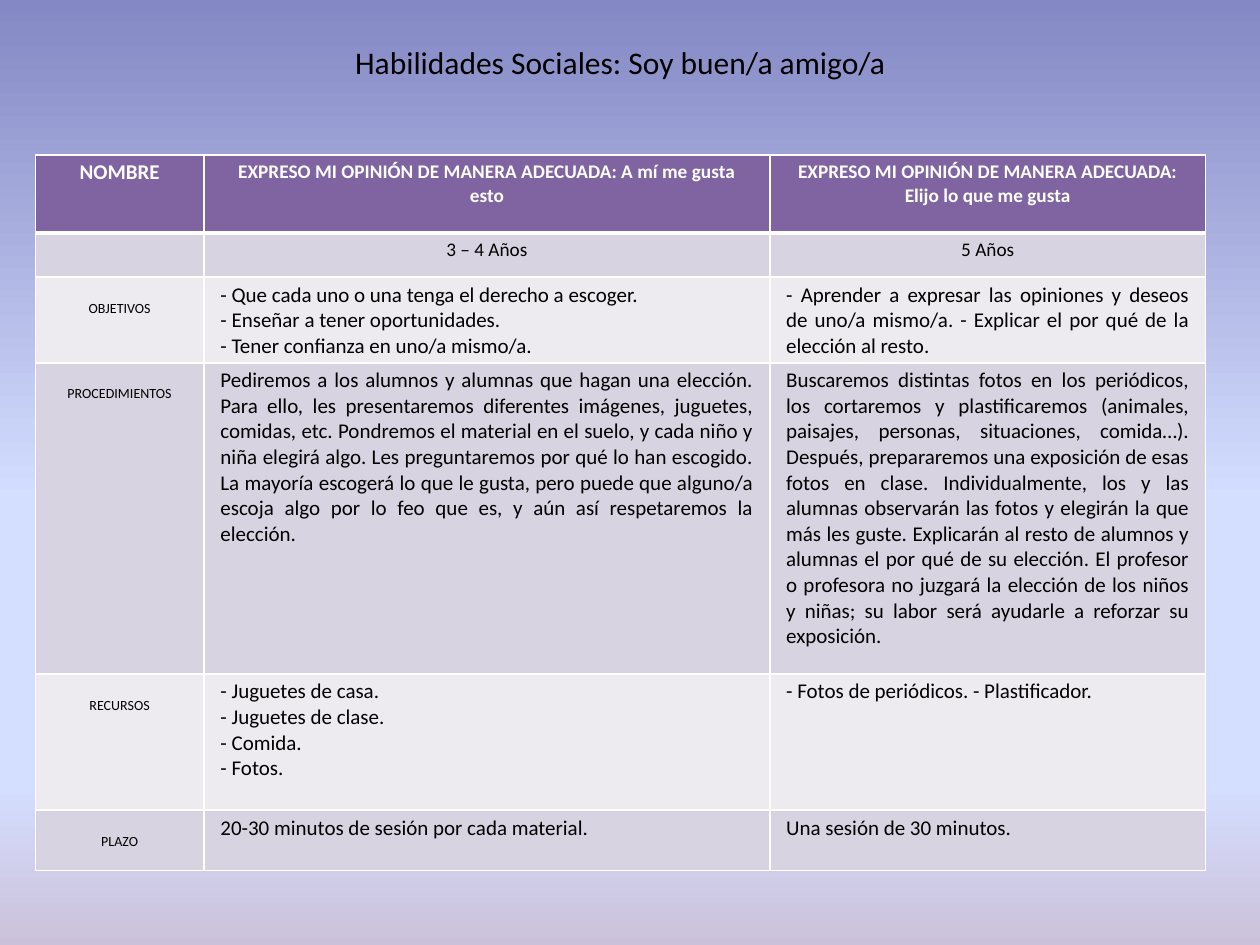
import pptx
import pptx.util
import pptx.dml.color
import pptx.enum.text
import pptx.oxml
import pptx.oxml.ns

Inches, Pt = pptx.util.Inches, pptx.util.Pt
RGB = pptx.dml.color.RGBColor.from_string
ALIGN = pptx.enum.text.PP_ALIGN
LEFT, CENTER, JUSTIFY = ALIGN.LEFT, ALIGN.CENTER, ALIGN.JUSTIFY
qn = pptx.oxml.ns.qn
NAMESPACE = pptx.oxml.ns.nsdecls("a")
COLORS = {"text": "000000", "white": "FFFFFF", "header": "8064A2",
          "band_dark": "D8D3E0", "band_light": "EDEAF0"}
BACKGROUND = [(0, "8488C4"), (53, "D4DEFF"), (83, "D4DEFF"), (100, "CCC1DA")]


def write(text_frame, lines, align, size, bold=False, color="text"):
    font_format = {"name": "Calibri", "size": Pt(size), "bold": bold}
    for index, line in enumerate(lines):
        paragraph = text_frame.add_paragraph() if index else text_frame.paragraphs[0]
        paragraph.alignment = align
        run = paragraph.add_run()
        run.text = line
        for name, value in font_format.items():
            setattr(run.font, name, value)
        run.font.color.rgb = RGB(COLORS[color])


def add_border(cell, position, side, width):
    line = pptx.oxml.parse_xml(
        f'<a:ln{side} {NAMESPACE} w="{Pt(width)}"><a:solidFill>'
        f'<a:srgbClr val="{COLORS["white"]}"/></a:solidFill></a:ln{side}>')
    cell._tc.get_or_add_tcPr().insert(position, line)


presentation = pptx.Presentation()
presentation.slide_width, presentation.slide_height = Inches(10), Inches(7.5)
slide = presentation.slides.add_slide(presentation.slide_layouts[6])

# Background: vertical gradient with four stops
fill = slide.background.fill
fill.gradient()
fill.gradient_angle = 270
stops = slide._element.find(".//" + qn("a:gsLst"))
for stop in list(stops):
    stops.remove(stop)
for share, color in BACKGROUND:
    stops.append(pptx.oxml.parse_xml(
        f'<a:gs {NAMESPACE} pos="{share * 1000}"><a:srgbClr val="{color}"/></a:gs>'))

# Title
title = slide.shapes.add_textbox(Inches(2.72), Inches(0.29), Inches(4.8), Inches(0.4))
title.text_frame.word_wrap = True
write(title.text_frame, ["Habilidades Sociales: Soy buen/a amigo/a"], LEFT, 18)

# Table content: each cell is its lines, alignment and size
label = (CENTER, 8)
rows = [
    [(["NOMBRE"], CENTER, 12),
     (["EXPRESO MI OPINIÓN DE MANERA ADECUADA: A mí me gusta esto"], CENTER, 11),
     (["EXPRESO MI OPINIÓN DE MANERA ADECUADA: Elijo lo que me gusta"], CENTER, 11)],
    [([], CENTER, 11), (["3 – 4 Años"], CENTER, 11), (["5 Años"], CENTER, 11)],
    [(["OBJETIVOS"], *label),
     (["- Que cada uno o una tenga el derecho a escoger.",
       "- Enseñar a tener oportunidades.",
       "- Tener confianza en uno/a mismo/a."], LEFT, 12),
     (["- Aprender a expresar las opiniones y deseos de uno/a mismo/a. "
       "- Explicar el por qué de la elección al resto."], JUSTIFY, 12)],
    [(["PROCEDIMIENTOS"], *label),
     (["Pediremos a los alumnos y alumnas que hagan una elección. Para ello, les "
       "presentaremos diferentes imágenes, juguetes, comidas, etc. Pondremos el "
       "material en el suelo, y cada niño y niña elegirá algo. Les preguntaremos por "
       "qué lo han escogido. La mayoría escogerá lo que le gusta, pero puede que "
       "alguno/a escoja algo por lo feo que es, y aún así respetaremos la elección."],
      JUSTIFY, 12),
     (["Buscaremos distintas fotos en los periódicos, los cortaremos y plastificaremos "
       "(animales, paisajes, personas, situaciones, comida…). Después, prepararemos "
       "una exposición de esas fotos en clase. Individualmente, los y las alumnas "
       "observarán las fotos y elegirán la que más les guste. Explicarán al resto de "
       "alumnos y alumnas el por qué de su elección. El profesor o profesora no "
       "juzgará la elección de los niños y niñas; su labor será ayudarle a reforzar "
       "su exposición."], JUSTIFY, 12)],
    [(["RECURSOS"], *label),
     (["- Juguetes de casa.", "- Juguetes de clase.", "- Comida.", "- Fotos."], LEFT, 12),
     (["- Fotos de periódicos. - Plastificador."], LEFT, 12)],
    [(["PLAZO"], *label),
     (["20-30 minutos de sesión por cada material."], LEFT, 12),
     (["Una sesión de 30 minutos."], LEFT, 12)],
]
column_widths = [1.34, 4.49, 3.46]
row_heights = [0.62, 0.35, 0.68, 2.47, 1.08, 0.48]

# Table grid
table = slide.shapes.add_table(
    len(rows), len(column_widths), Inches(0.28), Inches(1.23),
    Inches(sum(column_widths)), Inches(sum(row_heights))).table
table.horz_banding = False
for column, width in zip(table.columns, column_widths):
    column.width = Inches(width)
for row, height in zip(table.rows, row_heights):
    row.height = Inches(height)

# Cells
for row_index, row in enumerate(rows):
    is_header = row_index == 0
    band = "header" if is_header else "band_dark" if row_index % 2 else "band_light"
    for column_index, (lines, align, size) in enumerate(row):
        cell = table.cell(row_index, column_index)
        is_label = column_index == 0 and row_index > 1
        cell_format = {"margin_left": Inches(0.13), "margin_right": Inches(0.13),
                       "margin_top": Inches(0.18 if is_label else 0.04),
                       "margin_bottom": Inches(0.04)}
        for name, value in cell_format.items():
            setattr(cell, name, value)
        cell.fill.solid()
        cell.fill.fore_color.rgb = RGB(COLORS[band])
        widths = {"L": 1, "R": 1, "T": 3 if row_index == 1 else 1, "B": 3 if is_header else 1}
        for position, (side, width) in enumerate(widths.items()):
            add_border(cell, position, side, width)
        write(cell.text_frame, lines, align, size, is_header, "white" if is_header else "text")
        if not lines:
            cell.text_frame.paragraphs[0]._p.append(
                pptx.oxml.parse_xml(f'<a:endParaRPr {NAMESPACE} sz="{size * 100}"/>'))

presentation.save("out.pptx")
